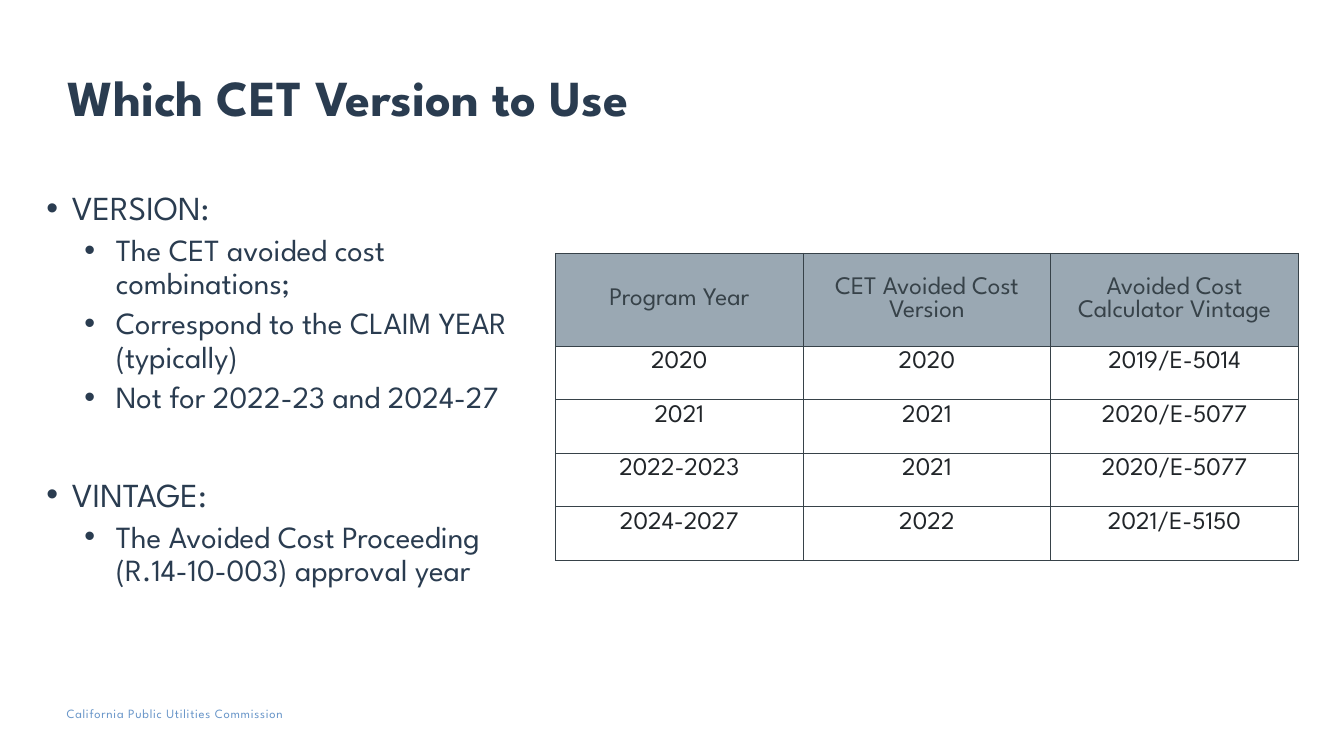
from lxml.etree import SubElement
from pptx import Presentation
from pptx.dml.color import RGBColor
from pptx.enum.text import MSO_ANCHOR as Anchor, MSO_AUTO_SIZE as AutoSize, PP_ALIGN as Align
from pptx.oxml.ns import qn
from pptx.util import Cm, Pt

COLORS = {"navy": "2A3C50", "footer": "6996C9", "header": "9AA8B3",
          "slate": "374249", "ink": "212529"}
FONT = "League Spartan"


def style(para, size, color, bold=False):
    for span in para.runs:
        span.font.name = FONT
        span.font.size = Pt(size)
        span.font.bold = bold
        span.font.color.rgb = RGBColor.from_string(COLORS[color])


def set_frame(frame, top=0.13, right=0.25):
    """Wrap text in a fixed frame with no left inset."""
    frame.word_wrap = True
    frame.auto_size = AutoSize.NONE
    frame.margin_left = 0
    frame.margin_right = Cm(right)
    frame.margin_top = frame.margin_bottom = Cm(top)


deck = Presentation()
deck.slide_width, deck.slide_height = Cm(33.87), Cm(19.05)
page = deck.slides.add_slide(deck.slide_layouts[5])

# Title
title = page.shapes.title
title.left, title.top, title.width, title.height = Cm(1.7), Cm(1.02), Cm(30.48), Cm(2.31)
title.text_frame.text = "Which CET Version to Use"
set_frame(title.text_frame)
title.text_frame.vertical_anchor = Anchor.BOTTOM
heading = title.text_frame.paragraphs[0]
heading.alignment = Align.LEFT
heading.line_spacing = 0.9
style(heading, 36, "navy", bold=True)

# Bullets: text, level, space before in points
bullets = [
    ("VERSION:", 0, 10),
    ("The CET avoided cost combinations;", 1, 5),
    ("Correspond to the CLAIM YEAR (typically)", 1, 5),
    ("Not for 2022-23 and 2024-27", 1, 5),
    ("VINTAGE:", 0, 45),
    ("The Avoided Cost Proceeding (R.14-10-003) approval year", 1, 5),
]
body = page.shapes.add_textbox(Cm(1.17), Cm(4.7), Cm(12.8), Cm(12.09)).text_frame
set_frame(body)
body.text = "\n".join(text for text, level, gap in bullets)
for para, (text, level, gap) in zip(body.paragraphs, bullets):
    para.level = level
    para.line_spacing = 0.9
    para.space_before = Pt(gap)
    style(para, 22 if level else 24, "navy")
    margin, hanging = (Cm(1.75), Cm(0.79)) if level else (Cm(0.64), Cm(0.64))
    props = para._p.get_or_add_pPr()
    props.set("marL", str(margin))
    props.set("indent", str(-hanging))
    SubElement(props, qn("a:buFont"), typeface="Arial")
    SubElement(props, qn("a:buChar"), char="•")

# Version table
rows = [
    ("Program Year", "CET Avoided Cost Version", "Avoided Cost Calculator Vintage"),
    ("2020", "2020", "2019/E-5014"),
    ("2021", "2021", "2020/E-5077"),
    ("2022-2023", "2021", "2020/E-5077"),
    ("2024-2027", "2022", "2021/E-5150"),
]
versions = page.shapes.add_table(len(rows), 3, Cm(14), Cm(6.38), Cm(18.72), Cm(7.74)).table
for column in versions.columns:
    column.width = Cm(6.24)
for index, row in enumerate(rows):
    is_header = index == 0
    versions.rows[index].height = Cm(2.34 if is_header else 1.35)
    for number, text in enumerate(row):
        cell = versions.cell(index, number)
        cell.text = text
        cell.vertical_anchor = Anchor.MIDDLE if is_header else Anchor.TOP
        para = cell.text_frame.paragraphs[0]
        para.alignment = Align.CENTER
        style(para, 18, "slate" if is_header else "ink")
        props = cell._tc.get_or_add_tcPr()
        for side in ("a:lnL", "a:lnR", "a:lnT", "a:lnB"):
            border = SubElement(props, qn(side), w=str(Pt(0.75)))
            fill = SubElement(border, qn("a:solidFill"))
            SubElement(fill, qn("a:srgbClr"), val=COLORS["slate"])
        if is_header:
            cell.fill.solid()
            cell.fill.fore_color.rgb = RGBColor.from_string(COLORS["header"])
        else:
            cell.fill.background()

# Footer
footer = page.shapes.add_textbox(Cm(1.68), Cm(17.78), Cm(8.15), Cm(0.38)).text_frame
set_frame(footer, top=0, right=0)
footer.text = "California Public Utilities Commission"
style(footer.paragraphs[0], 9, "footer")
footer.paragraphs[0].runs[0]._r.get_or_add_rPr().set("spc", "50")

deck.save("out.pptx")
